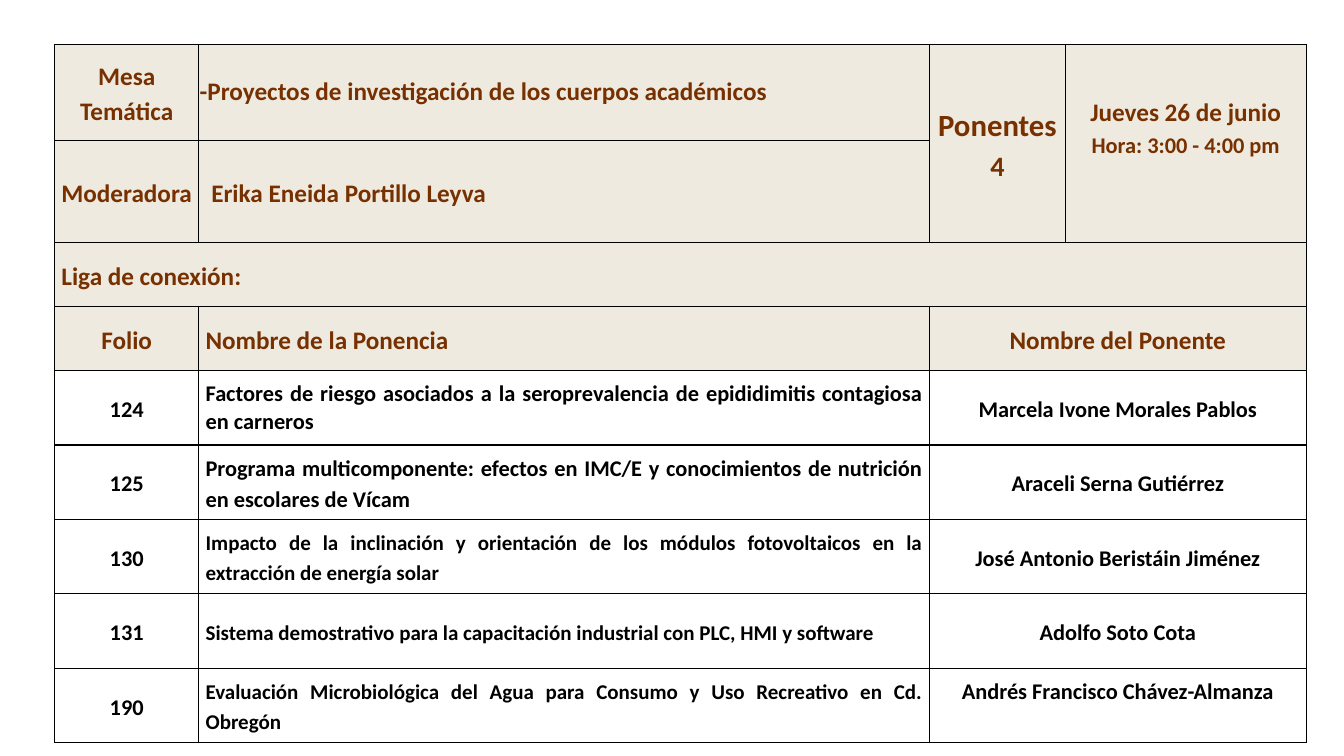
from lxml import etree
from pptx import Presentation, util as u
from pptx.dml.color import RGBColor
from pptx.enum import text
from pptx.oxml.ns import qn

COLORS = {"heading": "773000", "body": "000000", "band": "EFEADF", "border": "000000"}
CENTER, JUSTIFY = text.PP_ALIGN.CENTER, text.PP_ALIGN.JUSTIFY
ALIGNMENTS = [CENTER, JUSTIFY, CENTER]
COLUMN_WIDTHS = [103, 522, 97, 172]
ROW_HEIGHTS = [68.4, 73, 45.8, 45.8] + [53.2] * 5


def write_cell(cell, lines, align, color, spacing):
    cell.vertical_anchor = text.MSO_ANCHOR.MIDDLE
    cell.margin_left = cell.margin_right = u.Pt(4.9)
    cell.margin_top = cell.margin_bottom = 0
    frame = cell.text_frame
    for index, (words, size) in enumerate(lines):
        paragraph = frame.add_paragraph() if index else frame.paragraphs[0]
        paragraph.alignment = align
        paragraph.line_spacing = spacing
        run = paragraph.add_run()
        run.text = words
        run.font.name = "Calibri"
        run.font.size = u.Pt(size)
        run.font.bold = True
        run.font.color.rgb = RGBColor.from_string(COLORS[color])


def add_borders(cell):
    properties = cell._tc.get_or_add_tcPr()
    for side in ("a:lnL", "a:lnR", "a:lnT", "a:lnB"):
        line = etree.SubElement(properties, qn(side), w=str(u.Pt(1)))
        fill = etree.SubElement(line, qn("a:solidFill"))
        etree.SubElement(fill, qn("a:srgbClr"), val=COLORS["border"])


prs = Presentation()
prs.slide_width, prs.slide_height = u.Pt(960), u.Pt(540)
slide = prs.slides.add_slide(prs.slide_layouts[6])

program = slide.shapes.add_table(
    len(ROW_HEIGHTS), len(COLUMN_WIDTHS), u.Pt(39), u.Pt(31.7),
    u.Pt(sum(COLUMN_WIDTHS)), u.Pt(sum(ROW_HEIGHTS))).table
program.first_row = program.horz_banding = False
for column, width in zip(program.columns, COLUMN_WIDTHS):
    column.width = u.Pt(width)
for row, height in zip(program.rows, ROW_HEIGHTS):
    row.height = u.Pt(height)

for row_index, row in enumerate(program.rows):
    for cell in row.cells:
        add_borders(cell)
        if row_index < 4:
            cell.fill.solid()
            cell.fill.fore_color.rgb = RGBColor.from_string(COLORS["band"])
        else:
            cell.fill.background()

for column_index in (2, 3):
    program.cell(0, column_index).merge(program.cell(1, column_index))
program.cell(2, 0).merge(program.cell(2, 3))
for row_index in range(3, len(ROW_HEIGHTS)):
    program.cell(row_index, 2).merge(program.cell(row_index, 3))

headings = [
    (0, 0, CENTER, 1.15, [("Mesa Temática", 18)]),
    (0, 1, JUSTIFY, 1.0, [("-Proyectos de investigación de los cuerpos académicos", 18)]),
    (0, 2, CENTER, 1.15, [("Ponentes", 22), ("4", 20)]),
    (0, 3, CENTER, 1.15, [("Jueves 26 de junio", 18), ("Hora: 3:00 - 4:00 pm", 16)]),
    (1, 0, JUSTIFY, 1.15, [("Moderadora", 18)]),
    (1, 1, JUSTIFY, 1.15, [(" Erika Eneida Portillo Leyva", 18)]),
    (2, 0, JUSTIFY, 1.15, [("Liga de conexión:", 18)]),
    (3, 0, CENTER, 1.15, [("Folio", 18)]),
    (3, 1, JUSTIFY, 1.15, [("Nombre de la Ponencia", 18)]),
    (3, 2, CENTER, 1.15, [("Nombre del Ponente", 18)]),
]
for row_index, column_index, align, spacing, lines in headings:
    write_cell(program.cell(row_index, column_index), lines, align, "heading", spacing)

talks = [
    ("124", "Factores de riesgo asociados a la seroprevalencia de epididimitis contagiosa en carneros",
     "Marcela Ivone Morales Pablos", 16, 1.0),
    ("125", "Programa multicomponente: efectos en IMC/E y conocimientos de nutrición en escolares de Vícam",
     "Araceli Serna Gutiérrez", 16, 1.14),
    ("130", "Impacto de la inclinación y orientación de los módulos fotovoltaicos en la extracción de energía solar",
     "José Antonio Beristáin Jiménez", 15, 1.14),
    ("131", "Sistema demostrativo para la capacitación industrial con PLC, HMI y software",
     "Adolfo Soto Cota", 15, 1.14),
    ("190", "Evaluación Microbiológica del Agua para Consumo y Uso Recreativo en Cd. Obregón",
     "Andrés Francisco Chávez-Almanza", 15, 1.14),
]
for row_index, (folio, title, speaker, title_size, title_spacing) in enumerate(talks, start=4):
    contents = [(folio, 16, 1.14), (title, title_size, title_spacing), (speaker, 16, 1.14)]
    for column_index, (words, size, spacing) in enumerate(contents):
        write_cell(program.cell(row_index, column_index), [(words, size)],
                   ALIGNMENTS[column_index], "body", spacing)

topic = program.cell(0, 1)
topic.margin_left = topic.margin_right = u.Pt(0.7)
for raised, bottom_inset in ((program.cell(0, 3), 25), (program.cell(8, 2), 22)):
    raised.margin_bottom = u.Pt(bottom_inset)

prs.save("out.pptx")
